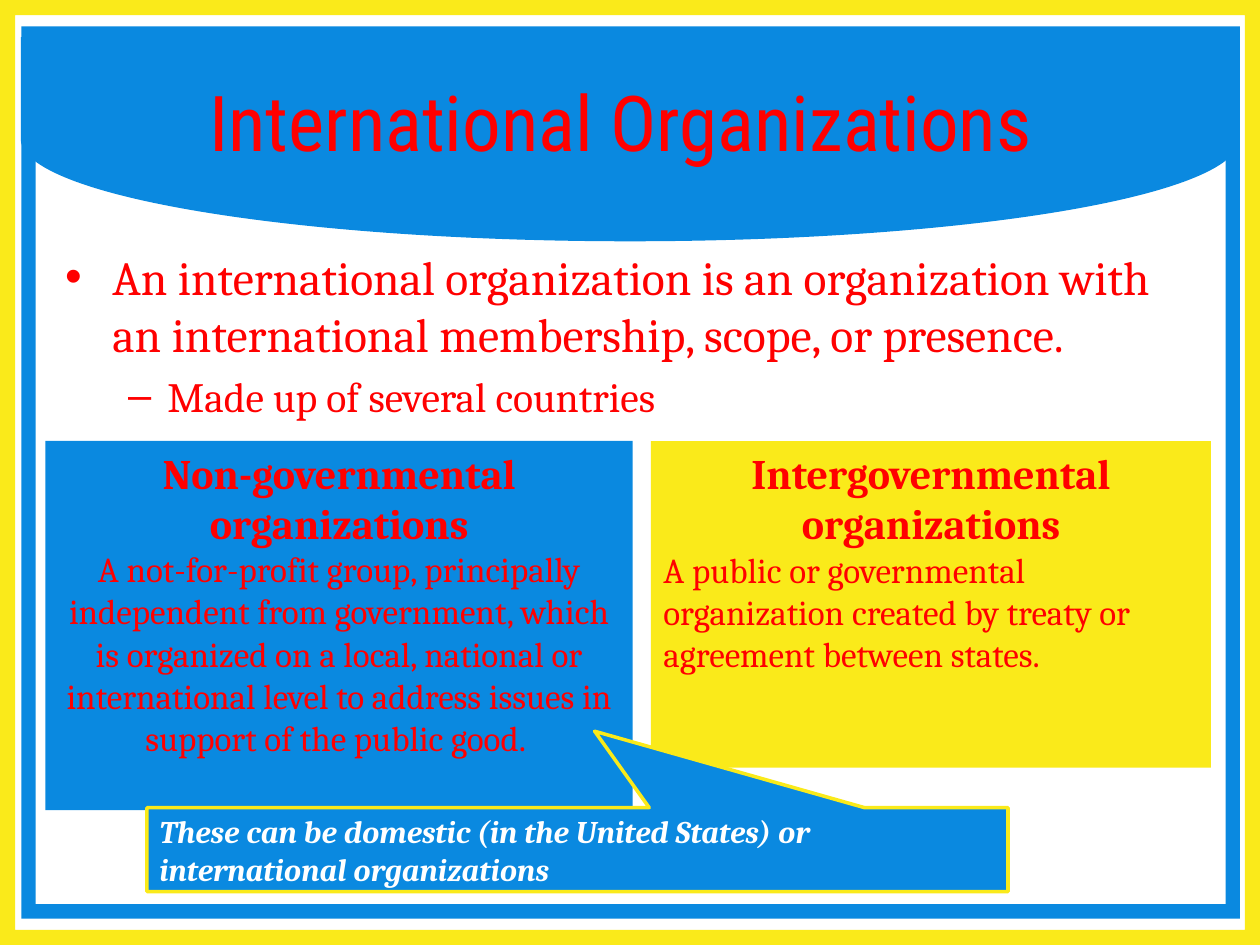
from dataclasses import dataclass
from typing import Optional

from pptx import Presentation
from pptx.dml.color import RGBColor
from pptx.enum.shapes import MSO_SHAPE
from pptx.enum.text import MSO_ANCHOR, MSO_AUTO_SIZE, PP_ALIGN
from pptx.util import Pt

BLUE = RGBColor(0x0A, 0x89, 0xE0)
YELLOW = RGBColor(0xFA, 0xEA, 0x1A)
RED = RGBColor(0xFF, 0x00, 0x00)
WHITE = RGBColor(0xFF, 0xFF, 0xFF)
SERIF = "Cambria"
CONDENSED = "Roboto Condensed"


@dataclass
class Area:
    left: float
    top: float
    width: float
    height: float

    def lengths(self) -> tuple:
        return Pt(self.left), Pt(self.top), Pt(self.width), Pt(self.height)


@dataclass
class Line:
    text: str
    size: float
    font: str = SERIF
    color: RGBColor = RED
    bold: bool = False
    italic: bool = False
    align: Optional[PP_ALIGN] = None
    level: int = 0
    before: float = 0


@dataclass
class Panel:
    kind: MSO_SHAPE
    area: Area
    fill: RGBColor
    adjustments: tuple = ()
    rotation: float = 0
    outline: Optional[RGBColor] = None
    anchor: MSO_ANCHOR = MSO_ANCHOR.TOP
    fit: MSO_AUTO_SIZE = MSO_AUTO_SIZE.NONE
    lines: tuple = ()


BACKDROP = (
    Panel(MSO_SHAPE.FLOWCHART_DELAY, Area(301.68, -268.56, 116.64, 696.24), BLUE, rotation=90),
    Panel(MSO_SHAPE.FRAME, Area(0, 0, 720, 540), YELLOW, (0.016,)),
    Panel(MSO_SHAPE.FRAME, Area(12.24, 15.12, 696.24, 509.76), BLUE, (0.016,)),
)

TITLE_LINES = (Line("International Organizations ", 44, CONDENSED, align=PP_ALIGN.CENTER),)

BODY_LINES = (
    Line("An international organization is an organization with an international "
         "membership, scope, or presence.", 27.2),
    Line("Made up of several countries", 23.8, level=1, before=4.8),
)

CONTENT = (
    Panel(MSO_SHAPE.RECTANGLE, Area(26, 252, 335.6, 211), BLUE,
          fit=MSO_AUTO_SIZE.SHAPE_TO_FIT_TEXT, lines=(
              Line("Non-governmental organizations", 24, bold=True, align=PP_ALIGN.CENTER),
              Line("A not-for-profit group, principally independent from government, which "
                   "is organized on a local, national or international level to address "
                   "issues in support of the public good. ", 20, align=PP_ALIGN.CENTER))),
    Panel(MSO_SHAPE.RECTANGLE, Area(372, 252, 320, 186.6), YELLOW,
          fit=MSO_AUTO_SIZE.SHAPE_TO_FIT_TEXT, lines=(
              Line("Intergovernmental organizations", 24, bold=True, align=PP_ALIGN.CENTER),
              Line("A public or governmental organization created by treaty or agreement "
                   "between states.", 20, align=PP_ALIGN.LEFT))),
    Panel(MSO_SHAPE.RECTANGULAR_CALLOUT, Area(84, 461.5, 492, 48), BLUE, (0.02, -1.41),
          outline=YELLOW, anchor=MSO_ANCHOR.MIDDLE, lines=(
              Line("These can be domestic (in the United States) or international "
                   "organizations", 18, color=WHITE, bold=True, italic=True,
                   align=PP_ALIGN.LEFT),)),
)


def write_lines(frame, lines: tuple) -> None:
    for index, line in enumerate(lines):
        para = frame.paragraphs[0] if index == 0 else frame.add_paragraph()
        para.level = line.level
        para.space_before = Pt(line.before)
        if line.align is not None:
            para.alignment = line.align
        span = para.add_run()
        span.text = line.text
        span.font.name = line.font
        span.font.size = Pt(line.size)
        span.font.color.rgb = line.color
        span.font.bold = line.bold
        span.font.italic = line.italic


def draw_panel(page, panel: Panel) -> None:
    shape = page.shapes.add_shape(panel.kind, *panel.area.lengths())
    shape.shadow.inherit = False
    shape.rotation = panel.rotation
    for index, value in enumerate(panel.adjustments):
        shape.adjustments[index] = value
    shape.fill.solid()
    shape.fill.fore_color.rgb = panel.fill
    if panel.outline is None:
        shape.line.fill.background()
    else:
        shape.line.color.rgb = panel.outline
        shape.line.width = Pt(2)
    if panel.lines:
        frame = shape.text_frame
        frame.word_wrap = True
        frame.auto_size = panel.fit
        frame.vertical_anchor = panel.anchor
        write_lines(frame, panel.lines)


def fill_placeholder(box, area: Area, anchor: MSO_ANCHOR, lines: tuple) -> None:
    """Place the box, bring it in front of the backdrop and write its text."""
    box.left, box.top, box.width, box.height = area.lengths()
    box.element.getparent().append(box.element)
    box.text_frame.auto_size = MSO_AUTO_SIZE.NONE
    box.text_frame.vertical_anchor = anchor
    write_lines(box.text_frame, lines)


def main() -> None:
    deck = Presentation()
    deck.slide_width, deck.slide_height = Pt(720), Pt(540)
    page = deck.slides.add_slide(deck.slide_layouts[1])
    title, body = page.shapes.title, page.placeholders[1]
    for panel in BACKDROP:
        draw_panel(page, panel)
    fill_placeholder(title, Area(36, 24, 648, 90), MSO_ANCHOR.MIDDLE, TITLE_LINES)
    fill_placeholder(body, Area(30, 138, 654, 102), MSO_ANCHOR.TOP, BODY_LINES)
    for panel in CONTENT:
        draw_panel(page, panel)
    deck.save("out.pptx")


if __name__ == "__main__":
    main()
